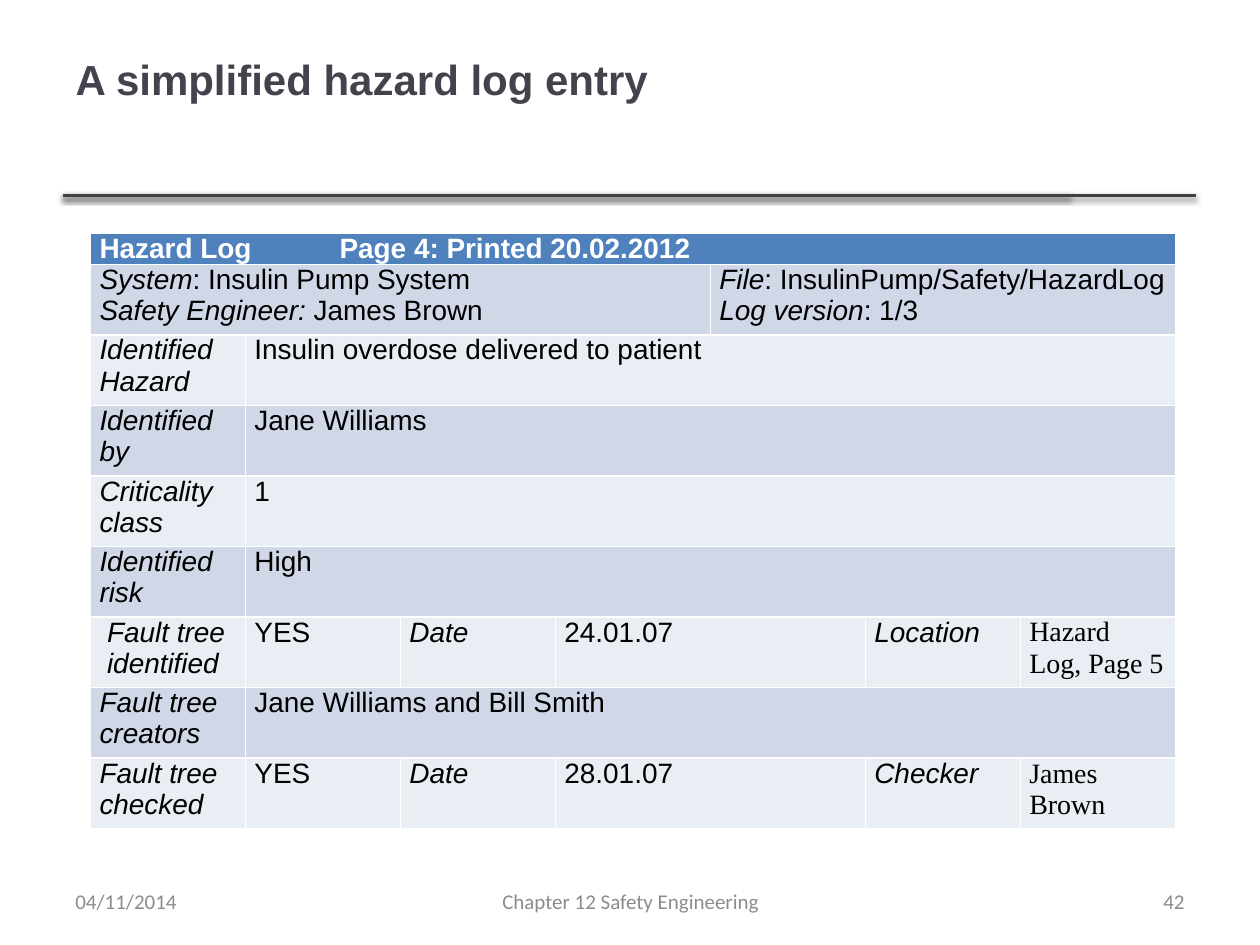
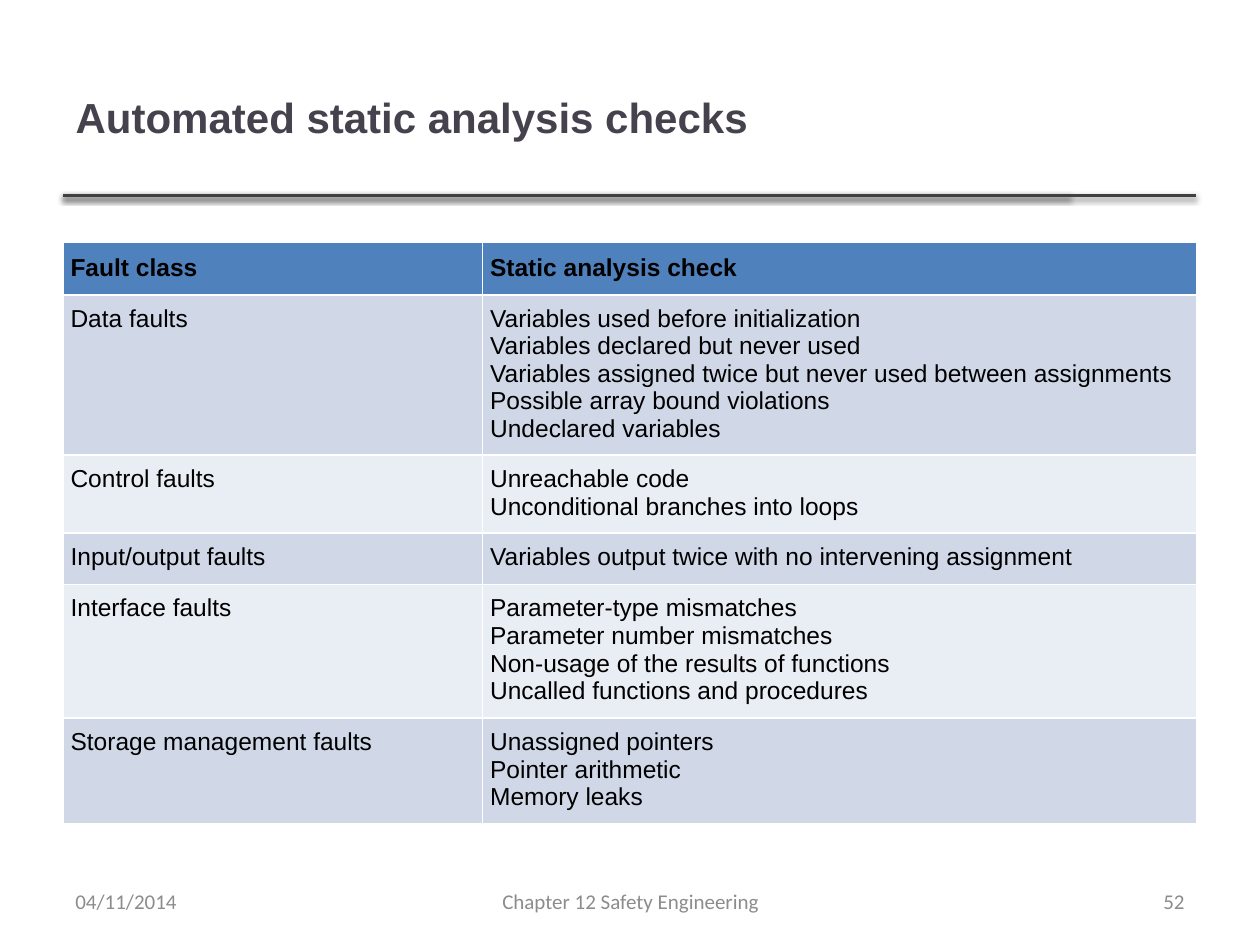
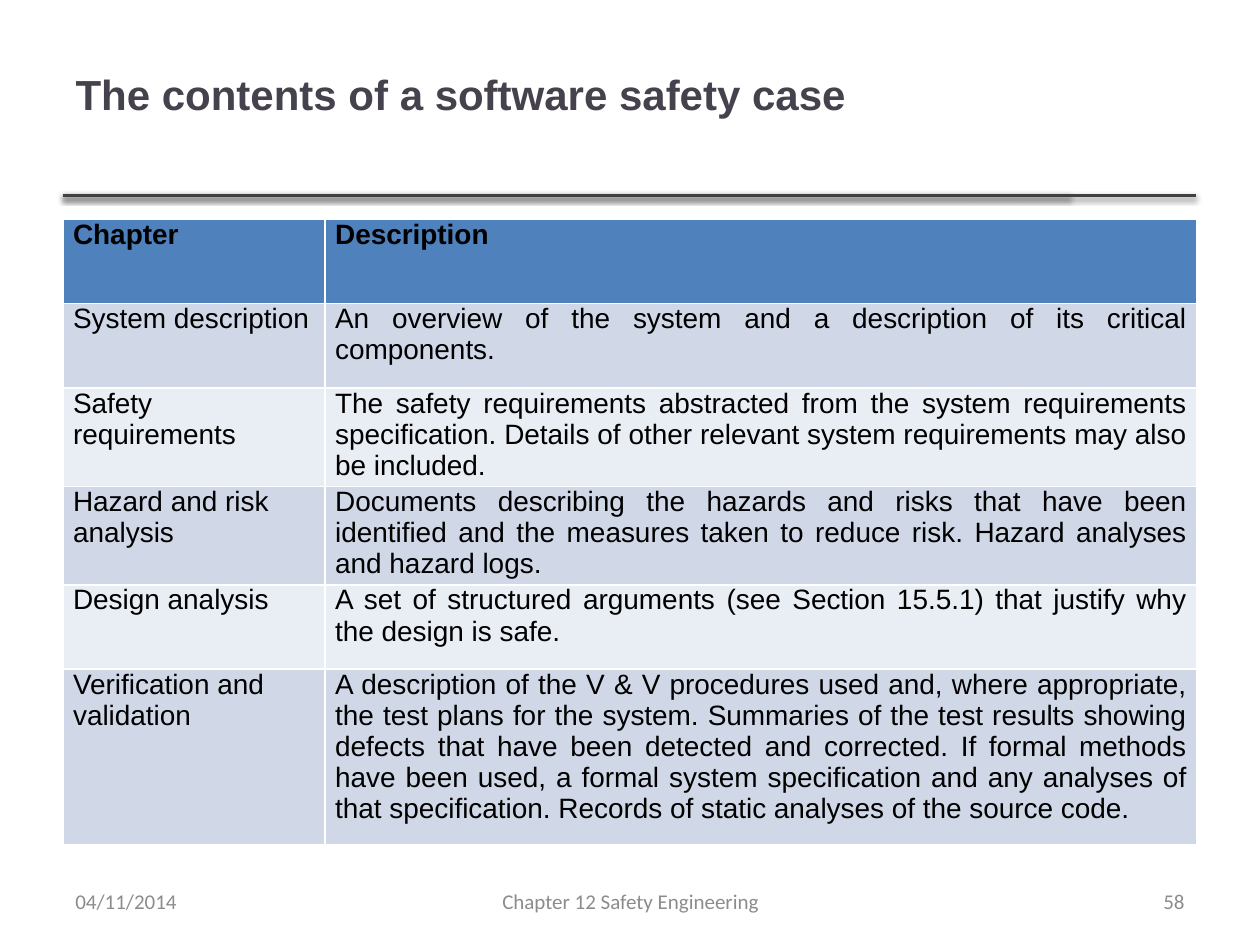
from dataclasses import dataclass

from lxml.etree import SubElement
from pptx import Presentation
from pptx.dml.color import RGBColor
from pptx.enum.shapes import MSO_CONNECTOR
from pptx.enum.text import MSO_ANCHOR, PP_ALIGN
from pptx.oxml import parse_xml
from pptx.oxml.ns import nsdecls, qn
from pptx.util import Inches, Pt

INK, WHITE = "000000", "FFFFFF"
TITLE_INK, RULE_INK, FOOTER_INK = "46424D", "404040", "8C8C8C"
HEADER_FILL, BAND_FILLS = "4F81BD", ("D0D8E8", "E9EDF4")
LEFT, RIGHT, CENTER, JUSTIFY = PP_ALIGN.LEFT, PP_ALIGN.RIGHT, PP_ALIGN.CENTER, PP_ALIGN.JUSTIFY
FOOTER_TOP, FOOTER_HEIGHT = 6.95, 0.4
RULE_TOP = 1.55


@dataclass(frozen=True)
class Cell:
    """Cell text with *italic* parts, one paragraph a line."""
    text: str
    span: int = 1
    font: str = "Arial"
    indent: float = 0
    tab: float = 0


@dataclass(frozen=True)
class Grid:
    """A banded table; margins run left, top, right, bottom."""
    left: float
    top: float
    cols: tuple[float, ...]
    heights: tuple[float, ...]
    rows: list[list[Cell]]
    size: int
    aligns: tuple
    header_margins: tuple[float, ...]
    margins: tuple[float, ...]
    header_ink: str = INK


@dataclass(frozen=True)
class Page:
    """One slide: title, title box, number and table."""
    title: str
    title_top: float
    title_width: float
    number: int
    grid: Grid


@dataclass(frozen=True)
class Footer:
    """One footer box."""
    left: float
    width: float
    align: PP_ALIGN
    text: str


def rgb(value: str) -> RGBColor:
    """Turn a hex string into a colour."""
    return RGBColor.from_string(value)


def style(r, size: int, color: str, font: str, bold: bool = False, italic: bool = False) -> None:
    """Format one run."""
    r.font.name, r.font.size = font, Pt(size)
    r.font.bold, r.font.italic = bold, italic
    r.font.color.rgb = rgb(color)


def add_rules(prs, slide) -> None:
    """Put the two shadowed rules under the title on the master."""
    for end in (8.49, 9.49):
        rule = slide.shapes.add_connector(
            MSO_CONNECTOR.STRAIGHT, Inches(0.5), Inches(RULE_TOP), Inches(end), Inches(RULE_TOP))
        rule.line.color.rgb = rgb(RULE_INK)
        rule.line.width = Pt(2)
        rule._element.spPr.append(parse_xml(
            f'<a:effectLst {nsdecls("a")}><a:outerShdw blurRad="{Pt(3.1)}" dist="{Pt(1.6)}" '
            'dir="5400000" rotWithShape="0"><a:srgbClr val="000000"><a:alpha val="38000"/>'
            '</a:srgbClr></a:outerShdw></a:effectLst>'))
        prs.slide_master.shapes._spTree.append(rule._element)


def add_title(slide, page: Page) -> None:
    """Place and format the title."""
    sp = slide.shapes.title
    sp.left, sp.top = Inches(0.5), Inches(page.title_top)
    sp.width, sp.height = Inches(page.title_width), Inches(1.25)
    tf = sp.text_frame
    tf.text, tf.vertical_anchor = page.title, MSO_ANCHOR.MIDDLE
    p = tf.paragraphs[0]
    p.alignment = LEFT
    style(p.runs[0], 24, TITLE_INK, "Arial", bold=True)


def add_footers(slide, number: int) -> None:
    """Add date, chapter and slide number."""
    for footer in (Footer(7.17, 2.33, RIGHT, str(number)),
                   Footer(3.42, 3.17, CENTER, "Chapter 12 Safety Engineering"),
                   Footer(0.5, 2.33, LEFT, "04/11/2014")):
        sp = slide.shapes.add_textbox(Inches(footer.left), Inches(FOOTER_TOP),
                                      Inches(footer.width), Inches(FOOTER_HEIGHT))
        tf = sp.text_frame
        tf.word_wrap, tf.vertical_anchor = True, MSO_ANCHOR.MIDDLE
        tf.text = footer.text
        p = tf.paragraphs[0]
        p.alignment = footer.align
        style(p.runs[0], 12, FOOTER_INK, "Calibri")


def add_borders(cell) -> None:
    """Give a table cell thin white borders."""
    tc_pr = cell._tc.get_or_add_tcPr()
    for i, side in enumerate(("lnL", "lnR", "lnT", "lnB")):
        tc_pr.insert(i, parse_xml(
            f'<a:{side} {nsdecls("a")} w="{Pt(1)}"><a:solidFill><a:srgbClr val="{WHITE}"/>'
            f'</a:solidFill></a:{side}>'))


def fill_cell(cell, content: Cell, grid: Grid, align: PP_ALIGN, header: bool) -> None:
    """Write the text of one cell."""
    margins = grid.header_margins if header else grid.margins
    cell.margin_left, cell.margin_top, cell.margin_right, cell.margin_bottom = map(Inches, margins)
    tf = cell.text_frame
    for i, line in enumerate(content.text.split("\n")):
        p = tf.add_paragraph() if i else tf.paragraphs[0]
        p.alignment = align
        p_pr = p._p.get_or_add_pPr()
        if content.indent:
            p_pr.set("marL", str(Inches(content.indent)))
        if content.tab:
            tabs = SubElement(p_pr, qn("a:tabLst"))
            SubElement(tabs, qn("a:tab"), pos=str(Inches(content.tab)), algn="r")
        for j, part in enumerate(line.split("*")):
            if part:
                r = p.add_run()
                r.text = part
                style(r, grid.size, grid.header_ink if header else INK, content.font,
                      bold=header, italic=j % 2 == 1)


def add_grid(slide, grid: Grid) -> None:
    """Draw the table with its bands and merged cells."""
    table = slide.shapes.add_table(
        len(grid.rows), len(grid.cols), Inches(grid.left), Inches(grid.top),
        Inches(sum(grid.cols)), Inches(sum(grid.heights))).table
    for column, width in zip(table.columns, grid.cols):
        column.width = Inches(width)
    for i, (contents, height) in enumerate(zip(grid.rows, grid.heights)):
        table.rows[i].height = Inches(height)
        for cell in table.rows[i].cells:
            cell.fill.solid()
            cell.fill.fore_color.rgb = rgb(BAND_FILLS[(i - 1) % 2] if i else HEADER_FILL)
            add_borders(cell)
        col = 0
        for content in contents:
            cell = table.cell(i, col)
            if content.span > 1:
                cell.merge(table.cell(i, col + content.span - 1))
            fill_cell(cell, content, grid, grid.aligns[col], header=i == 0)
            col += content.span


def wide_row(label: str, value: str) -> list[Cell]:
    """Make a hazard log row with one value."""
    return [Cell(f"*{label}*"), Cell(value, span=6)]


def dated_row(label: str, date: str, key: str, value: str, indent: float = 0) -> list[Cell]:
    """Make a hazard log row with a date and one more field."""
    return [Cell(f"*{label}*", indent=indent), Cell("YES"), Cell("*Date*"), Cell(date, span=2),
            Cell(f"*{key}*"), Cell(value, font="Times New Roman")]


def pairs(*rows: tuple[str, str]) -> list[list[Cell]]:
    """Make plain two-column rows."""
    return [[Cell(text) for text in row] for row in rows]


LOG_MARGINS = (0.07, 0, 0.07, 0)
HAZARD_LOG = Grid(
    0.72, 1.85, (1.23,) * 7, (0.24,) + (0.56,) * 8,
    [
        [Cell("Hazard Log \tPage 4: Printed 20.02.2012", span=7, tab=4.69)],
        [Cell("*System*: Insulin Pump System\n*Safety Engineer:* James Brown", span=4),
         Cell("*File*: InsulinPump/Safety/HazardLog\n*Log version*: 1/3", span=3)],
        wide_row("Identified Hazard", "Insulin overdose delivered to patient"),
        wide_row("Identified by", "Jane Williams"),
        wide_row("Criticality class", "1"),
        wide_row("Identified risk", "High"),
        dated_row("Fault tree identified", "24.01.07", "Location", "Hazard Log, Page 5", indent=0.06),
        wide_row("Fault tree creators", "Jane Williams and Bill Smith"),
        dated_row("Fault tree checked", "28.01.07", "Checker", "James Brown"),
    ],
    16, (LEFT,) * 7, LOG_MARGINS, LOG_MARGINS, WHITE)

STATIC_CHECKS = Grid(
    0.5, 1.92, (3.33, 5.67), (0.42, 1.27, 0.61, 0.41, 1.06, 0.83),
    pairs(
        ("Fault class", "Static analysis check"),
        ("Data faults", "Variables used before initialization\n"
                        "Variables declared but never used\n"
                        "Variables assigned twice but never used between assignments\n"
                        "Possible array bound violations\n"
                        "Undeclared variables"),
        ("Control faults", "Unreachable code\nUnconditional branches into loops"),
        ("Input/output faults", "Variables output twice with no intervening assignment"),
        ("Interface faults", "Parameter-type mismatches\n"
                             "Parameter number mismatches\n"
                             "Non-usage of the results of functions\n"
                             "Uncalled functions and procedures"),
        ("Storage management faults", "Unassigned pointers\nPointer arithmetic\nMemory leaks"),
    ),
    14, (JUSTIFY, JUSTIFY), (0.06, 0.1, 0.06, 0.1), (0.06, 0.08, 0.06, 0.1))

CASE_MARGINS = (0.08, 0, 0.08, 0.04)
SAFETY_CASE = Grid(
    0.5, 1.74, (2.08, 6.92), (0.67, 0.67, 0.78, 0.78, 0.67, 1.39),
    pairs(
        ("Chapter", "Description"),
        ("System description",
         "An overview of the system and a description of its critical components."),
        ("Safety requirements",
         "The safety requirements abstracted from the system requirements specification. "
         "Details of other relevant system requirements may also be included."),
        ("Hazard and risk analysis",
         "Documents describing the hazards and risks that have been identified and the "
         "measures taken to reduce risk. Hazard analyses and hazard logs."),
        ("Design analysis",
         "A set of structured arguments (see Section 15.5.1) that justify why the design is safe."),
        ("Verification and validation",
         "A description of the V & V procedures used and, where appropriate, the test plans for "
         "the system. Summaries of the test results showing defects that have been detected and "
         "corrected. If formal methods have been used, a formal system specification and any "
         "analyses of that specification. Records of static analyses of the source code."),
    ),
    16, (LEFT, JUSTIFY), CASE_MARGINS, CASE_MARGINS)

PAGES = (
    Page("A simplified hazard log entry", 0, 9, 42, HAZARD_LOG),
    Page("Automated static analysis checks", 0.3, 7.98, 52, STATIC_CHECKS),
    Page("The contents of a software safety case", 0.12, 9, 58, SAFETY_CASE),
)


def main() -> None:
    """Build and save the slides."""
    prs = Presentation()
    prs.slide_width, prs.slide_height = Inches(10), Inches(7.5)
    for i, page in enumerate(PAGES):
        slide = prs.slides.add_slide(prs.slide_layouts.get_by_name("Title Only"))
        if i == 0:
            add_rules(prs, slide)
        add_title(slide, page)
        add_grid(slide, page.grid)
        add_footers(slide, page.number)
    prs.save("out.pptx")


if __name__ == "__main__":
    main()
